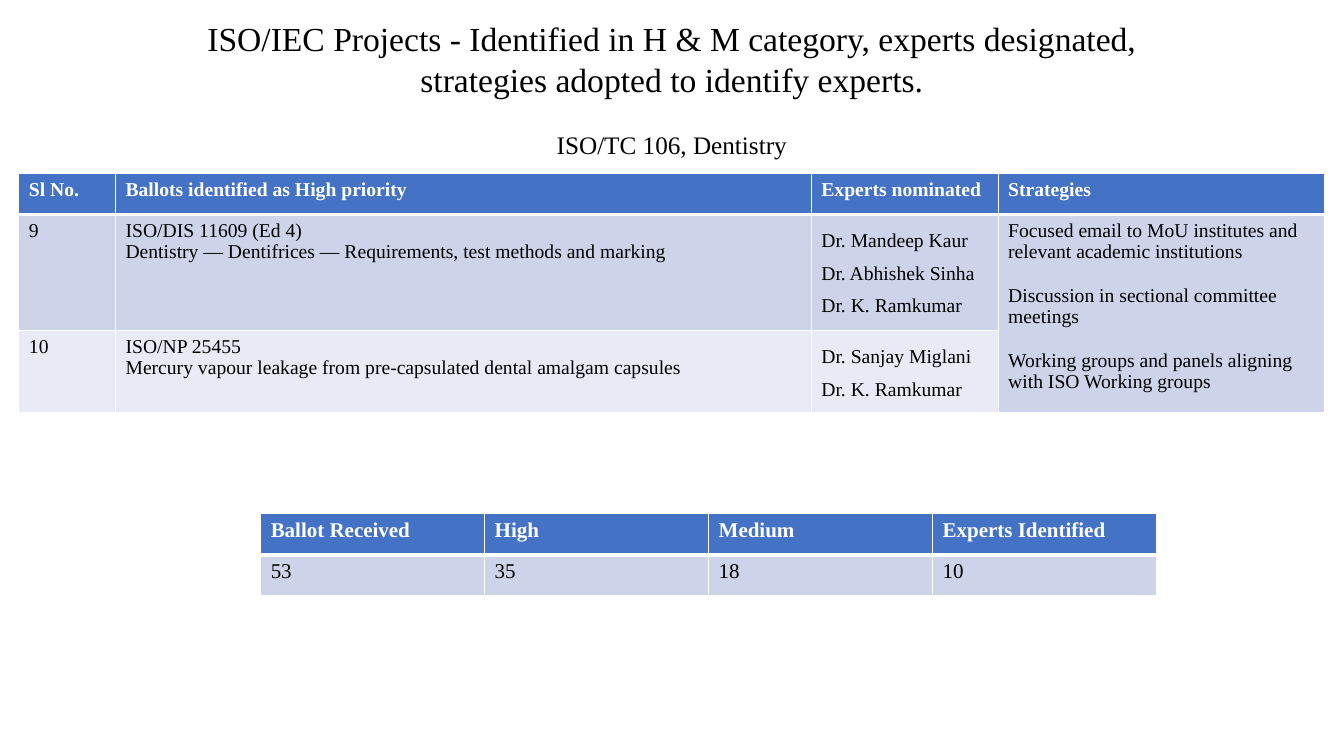
from lxml.etree import SubElement
from pptx import Presentation
from pptx.dml.color import RGBColor
from pptx.enum.text import PP_ALIGN
from pptx.oxml import parse_xml
from pptx.oxml.ns import nsdecls
from pptx.util import Pt

FONT = "Times New Roman"
COLORS = {
    "text": "000000",
    "white": "FFFFFF",
    "header": "4472C4",
    "odd_row": "CDD4EA",
    "even_row": "E8EBF5",
}

TITLE = ("ISO/IEC Projects - Identified in H & M category, experts designated, "
         "strategies adopted to identify experts.")
SUBTITLE = "ISO/TC 106, Dentistry"

BALLOT_ROWS = [
    ["Sl No.", "Ballots identified as High priority", "Experts nominated", "Strategies"],
    ["9",
     "ISO/DIS 11609 (Ed 4)\nDentistry — Dentifrices — Requirements, test methods and marking",
     "Dr. Mandeep Kaur\nDr. Abhishek Sinha\nDr. K. Ramkumar",
     "Focused email to MoU institutes and relevant academic institutions\n"
     "Discussion in sectional committee meetings\n"
     "Working groups and panels aligning with ISO Working groups"],
    ["10",
     "ISO/NP 25455\nMercury vapour leakage from pre-capsulated dental amalgam capsules",
     "Dr. Sanjay Miglani\nDr. K. Ramkumar",
     ""],
]
SUMMARY_ROWS = [
    ["Ballot Received", "High", "Medium", "Experts Identified"],
    ["53", "35", "18", "10"],
]


def format_paragraph(paragraph, size, color, bold=False):
    for run in paragraph.runs:
        run.font.name = FONT
        run.font.size = Pt(size)
        run.font.bold = bold
        run.font.color.rgb = RGBColor.from_string(COLORS[color])


def set_borders(cell, widths):
    """Draw white borders; widths are left, right, top, bottom in points."""
    properties = cell._tc.get_or_add_tcPr()
    for index, (side, width) in enumerate(zip("LRTB", widths)):
        line = parse_xml(f'<a:ln{side} {nsdecls("a")} w="{Pt(width)}"><a:solidFill>'
                         f'<a:srgbClr val="{COLORS["white"]}"/></a:solidFill></a:ln{side}>')
        properties.insert(index, line)


def add_heading(slide, left, top, width, height):
    text_frame = slide.shapes.add_textbox(Pt(left), Pt(top), Pt(width), Pt(height)).text_frame
    text_frame.word_wrap = True
    text_frame.text = f"{TITLE}\n{SUBTITLE}"
    title, subtitle = text_frame.paragraphs
    subtitle.space_before = Pt(22)
    for paragraph, size in ((title, 24), (subtitle, 18)):
        paragraph.alignment = PP_ALIGN.CENTER
        format_paragraph(paragraph, size, "text")


def add_banded_table(slide, left, top, column_widths, row_heights, rows, size):
    table = slide.shapes.add_table(
        len(rows), len(column_widths), Pt(left), Pt(top),
        Pt(sum(column_widths)), Pt(sum(row_heights))).table
    for column, width in zip(table.columns, column_widths):
        column.width = Pt(width)
    for row_index, (row, height, texts) in enumerate(zip(table.rows, row_heights, rows)):
        row.height = Pt(height)
        is_header = row_index == 0
        fill = "header" if is_header else "odd_row" if row_index % 2 else "even_row"
        for cell, text in zip(row.cells, texts):
            cell.text_frame.text = text
            cell.fill.solid()
            cell.fill.fore_color.rgb = RGBColor.from_string(COLORS[fill])
            set_borders(cell, (1, 1, 3 if row_index == 1 else 1, 3 if is_header else 1))
            for paragraph in cell.text_frame.paragraphs:
                format_paragraph(paragraph, size, "white" if is_header else "text", is_header)
    return table


def add_ballot_table(slide, left, top):
    table = add_banded_table(slide, left, top, [69, 497, 133.5, 233],
                             [29.3, 82.8, 58.5], BALLOT_ROWS, 14)
    # Expert names are widely spaced
    for row_index in (1, 2):
        for paragraph in table.cell(row_index, 2).text_frame.paragraphs:
            paragraph.line_spacing = 1.5
    # Strategies apply to both ballots
    strategies = table.cell(1, 3)
    strategies.merge(table.cell(2, 3))
    for paragraph in strategies.text_frame.paragraphs[1:]:
        paragraph.space_before = Pt(15.5)


def add_summary_table(slide, left, top):
    add_banded_table(slide, left, top, [160] * 4, [29.3] * 2, SUMMARY_ROWS, 15)


def main():
    presentation = Presentation()
    presentation.slide_width, presentation.slide_height = Pt(960), Pt(540)
    slide = presentation.slides.add_slide(presentation.slide_layouts[6])
    add_heading(slide, 121.7, 9.4, 716.4, 109.4)
    add_ballot_table(slide, 13.5, 124)
    add_summary_table(slide, 186.2, 367)
    presentation.save("out.pptx")


if __name__ == "__main__":
    main()
